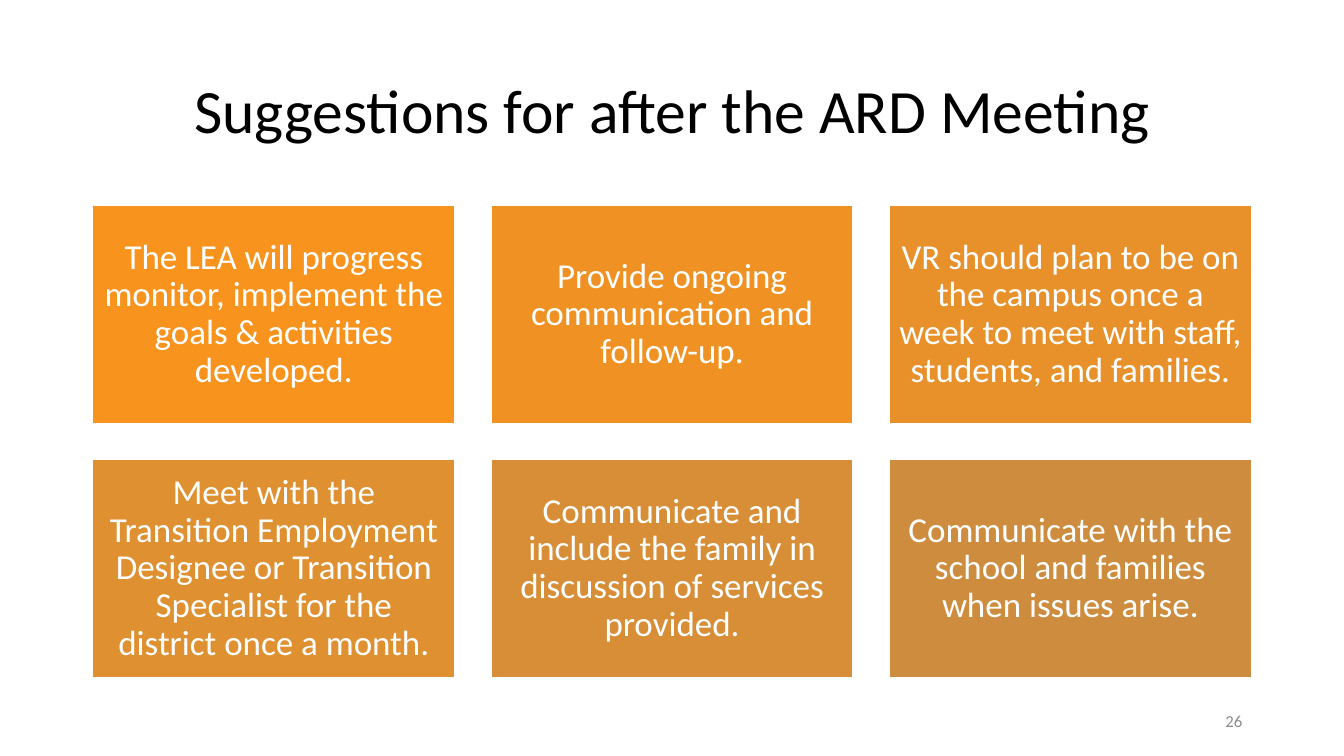
from dataclasses import dataclass

import pptx
import pptx.dml.color
import pptx.enum.shapes
import pptx.enum.text
import pptx.util

Inches = pptx.util.Inches
Pt = pptx.util.Pt
Align = pptx.enum.text.PP_ALIGN

FONT = "Calibri"
COLUMNS = 3
LEFT, TOP = 0.92, 2.04
CARD_W, CARD_H = 3.59, 2.16
GAP = 0.36


@dataclass
class Card:
    text: str
    fill: str


CARDS = [
    Card("The LEA will progress monitor, implement the goals & activities developed.", "F8931D"),
    Card("Provide ongoing communication and follow-up.", "F09223"),
    Card("VR should plan to be on the campus once a week to meet with staff, "
         "students, and families.", "E8912A"),
    Card("Meet with the Transition Employment Designee or Transition Specialist "
         "for the district once a month.", "DF9030"),
    Card("Communicate and include the family in discussion of services provided.", "D78E37"),
    Card("Communicate with the school and families when issues arise.", "CE8D3E"),
]


def rgb(value: str) -> pptx.dml.color.RGBColor:
    return pptx.dml.color.RGBColor.from_string(value)


def write(sp, text: str, size: float, color: str, align: Align, spacing: float = 1.0) -> None:
    """Put one vertically centred paragraph into a shape."""
    tf = sp.text_frame
    tf.text = text
    tf.word_wrap = True
    tf.vertical_anchor = pptx.enum.text.MSO_ANCHOR.MIDDLE
    p = tf.paragraphs[0]
    p.alignment = align
    p.line_spacing = spacing
    font = p.runs[0].font
    font.name = FONT
    font.size = Pt(size)
    font.color.rgb = rgb(color)


def add_label(s, left: float, top: float, width: float, height: float):
    return s.shapes.add_textbox(Inches(left), Inches(top), Inches(width), Inches(height))


def add_card(s, card: Card, left: float, top: float) -> None:
    sp = s.shapes.add_shape(pptx.enum.shapes.MSO_SHAPE.RECTANGLE,
                            Inches(left), Inches(top), Inches(CARD_W), Inches(CARD_H))
    sp.shadow.inherit = False
    sp.fill.solid()
    sp.fill.fore_color.rgb = rgb(card.fill)
    sp.line.color.rgb = rgb("FFFFFF")
    sp.line.width = Pt(1)
    tf = sp.text_frame
    tf.margin_left = tf.margin_right = tf.margin_top = tf.margin_bottom = Inches(0.1)
    write(sp, card.text, 25, "FFFFFF", Align.CENTER, 0.9)


def main() -> None:
    prs = pptx.Presentation()
    prs.slide_width = Inches(13.33)
    prs.slide_height = Inches(7.5)
    s = prs.slides.add_slide(prs.slide_layouts[6])

    # Title
    title = add_label(s, LEFT, 0.4, 11.5, 1.45)
    write(title, "Suggestions for after the ARD Meeting", 44, "000000", Align.CENTER, 0.9)

    # Grid of suggestions
    for i, card in enumerate(CARDS):
        row, col = divmod(i, COLUMNS)
        add_card(s, card, LEFT + col * (CARD_W + GAP), TOP + row * (CARD_H + GAP))

    # Slide number
    number = add_label(s, 9.42, 6.95, 3, 0.4)
    write(number, "26", 12, "8C8C8C", Align.RIGHT)

    prs.save("out.pptx")


if __name__ == "__main__":
    main()
